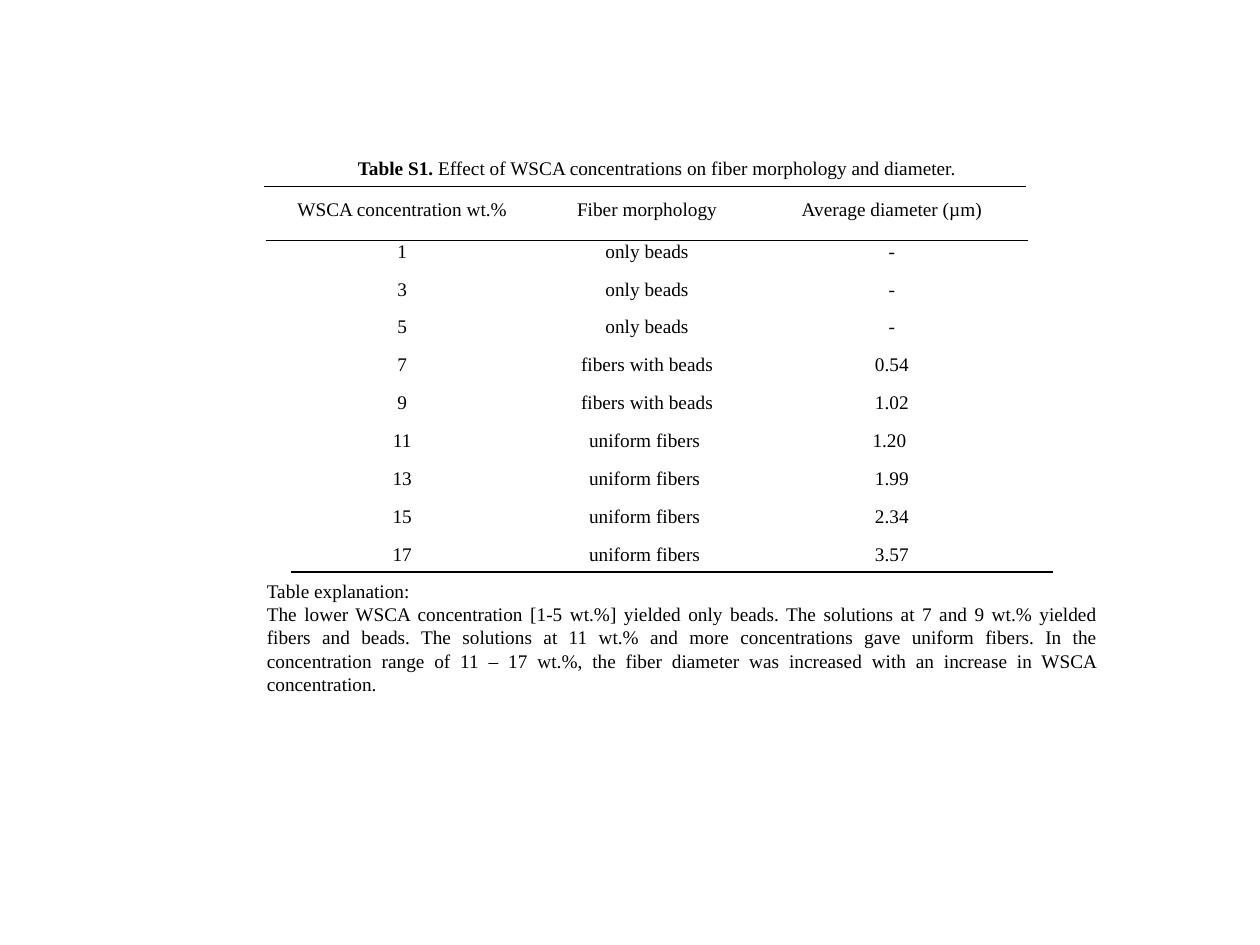
from dataclasses import dataclass

from pptx import Presentation
from pptx.dml.color import RGBColor
from pptx.enum import shapes, text
from pptx.oxml import ns
from pptx.util import Pt


@dataclass(frozen=True)
class Theme:
    font: str = "Times New Roman"
    size: float = 11
    leading: float = 14
    ink: RGBColor = RGBColor(0, 0, 0)
    rule_width: float = 1


@dataclass(frozen=True)
class Box:
    left: float
    top: float
    width: float
    height: float


@dataclass(frozen=True)
class Rule:
    left: float
    top: float
    width: float = 435.5


THEME = Theme()
CAPTION = Box(197.3, 85, 363, 21.6)
TABLE = Box(159.9, 106.6, 419.7, 220.7)
EXPLANATION = Box(145.4, 327.6, 488.9, 74.2)
HEADER_HEIGHT = 25.4
RULES = [Rule(151, 106.6), Rule(152, 137.5), Rule(166.5, 326.9)]

HEADERS = ("WSCA concentration wt.%", "Fiber morphology", "Average diameter (µm)")
ROWS = [
    ("1", "only beads", "-"),
    ("3", "only beads", "-"),
    ("5", "only beads", "-"),
    ("7", "fibers with beads", "0.54"),
    ("9", "fibers with beads", "1.02"),
    ("11", "uniform fibers ", "1.20 "),
    ("13", "uniform fibers ", "1.99"),
    ("15", "uniform fibers ", "2.34"),
    ("17", "uniform fibers ", "3.57"),
]
EXPLANATION_TEXT = [
    "Table explanation:",
    "The lower WSCA concentration [1-5 wt.%] yielded only beads. "
    "The solutions at 7 and 9 wt.% yielded fibers and beads. "
    "The solutions at 11 wt.% and more concentrations gave uniform fibers. "
    "In the concentration range of 11 – 17 wt.%, the fiber diameter was "
    "increased with an increase in WSCA concentration.",
]


def write(p, content: str, *, bold: bool = False,
          align=text.PP_ALIGN.JUSTIFY, leading: float | None = None) -> None:
    p.alignment = align
    if leading:
        p.line_spacing = Pt(leading)
    r = p.add_run()
    r.text = content
    r.font.name = THEME.font
    r.font.size = Pt(THEME.size)
    r.font.bold = bold
    r.font.color.rgb = THEME.ink


def format_frame(tf) -> None:
    tf.word_wrap = True
    tf.auto_size = text.MSO_AUTO_SIZE.SHAPE_TO_FIT_TEXT
    tf.vertical_anchor = text.MSO_ANCHOR.TOP


def add_caption(s, box: Box) -> None:
    sp = s.shapes.title
    sp.left, sp.top = Pt(box.left), Pt(box.top)
    sp.width, sp.height = Pt(box.width), Pt(box.height)
    format_frame(sp.text_frame)
    p = sp.text_frame.paragraphs[0]
    write(p, "Table S1.", bold=True, leading=THEME.leading)
    write(p, " Effect of WSCA concentrations on fiber morphology and diameter.",
          leading=THEME.leading)


def add_results(s, box: Box) -> None:
    data = [HEADERS, *ROWS]
    table = s.shapes.add_table(len(data), len(HEADERS), Pt(box.left), Pt(box.top),
                               Pt(box.width), Pt(box.height)).table
    table.first_row = table.horz_banding = False
    for column in table.columns:
        column.width = Pt(box.width / len(HEADERS))
    row_height = (box.height - HEADER_HEIGHT) / len(ROWS)
    for i, values in enumerate(data):
        table.rows[i].height = Pt(row_height if i else HEADER_HEIGHT)
        for j, value in enumerate(values):
            cell = table.cell(i, j)
            cell.fill.background()
            cell.vertical_anchor = text.MSO_ANCHOR.MIDDLE
            cell.margin_left = cell.margin_right = Pt(5)
            cell.margin_top = cell.margin_bottom = 0
            write(cell.text_frame.paragraphs[0], value,
                  align=text.PP_ALIGN.CENTER, leading=THEME.leading)


def add_explanation(s, box: Box) -> None:
    sp = s.shapes.add_textbox(Pt(box.left), Pt(box.top), Pt(box.width), Pt(box.height))
    tf = sp.text_frame
    format_frame(tf)
    for i, content in enumerate(EXPLANATION_TEXT):
        write(tf.add_paragraph() if i else tf.paragraphs[0], content)


def add_rule(s, rule: Rule) -> None:
    sp = s.shapes.add_connector(shapes.MSO_CONNECTOR.STRAIGHT, Pt(rule.left), Pt(rule.top),
                                Pt(rule.left + rule.width), Pt(rule.top))
    sp.line.color.rgb = THEME.ink
    sp.line.width = Pt(THEME.rule_width)
    sp._element.spPr.append(sp._element.makeelement(ns.qn("a:effectLst"), {}))


def main() -> None:
    prs = Presentation()
    prs.slide_width, prs.slide_height = Pt(720), Pt(540)
    s = prs.slides.add_slide(prs.slide_layouts.get_by_name("Title Only"))
    add_explanation(s, EXPLANATION)
    add_caption(s, CAPTION)
    add_results(s, TABLE)
    for rule in RULES:
        add_rule(s, rule)
    prs.save("out.pptx")


if __name__ == "__main__":
    main()
